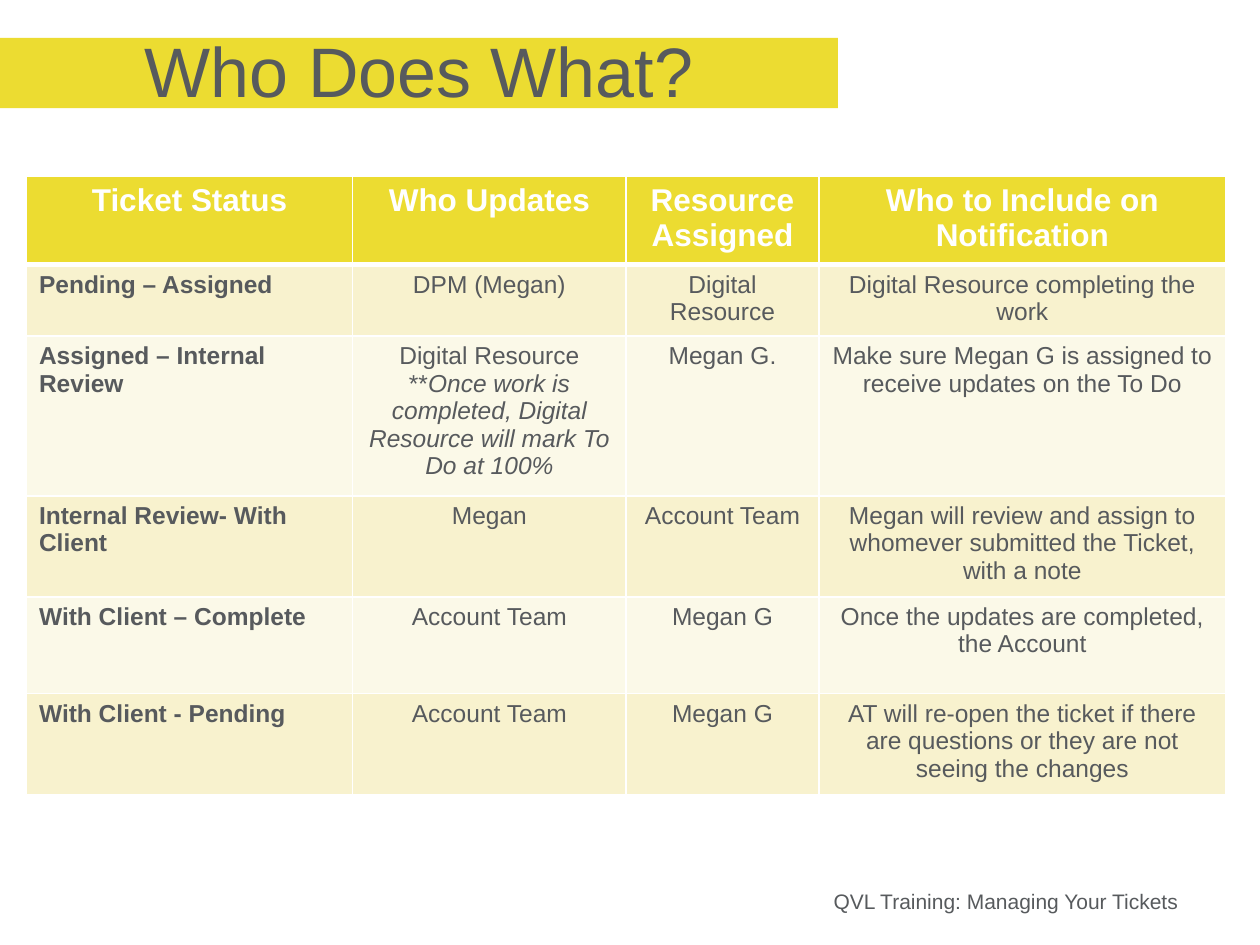
from lxml import etree
from pptx import Presentation
from pptx.dml.color import RGBColor
from pptx.enum.shapes import MSO_SHAPE
from pptx.enum.text import MSO_ANCHOR, PP_ALIGN
from pptx.oxml.ns import qn
from pptx.util import Inches, Pt

LEFT, CENTER, RIGHT = PP_ALIGN.LEFT, PP_ALIGN.CENTER, PP_ALIGN.RIGHT
MIDDLE = MSO_ANCHOR.MIDDLE
RECTANGLE = MSO_SHAPE.RECTANGLE
YELLOW = RGBColor(0xEC, 0xDC, 0x31)
SAND = RGBColor(0xF8, 0xF2, 0xCE)
CREAM = RGBColor(0xFB, 0xF9, 0xE8)
GRAY = RGBColor(0x57, 0x5A, 0x5D)
WHITE = RGBColor(0xFF, 0xFF, 0xFF)

COLUMN_WIDTHS = [2.59, 2.17, 1.53, 3.23]
ROW_HEIGHTS = [0.65, 0.53, 1.19, 0.76, 0.77, 0.76]
ROWS = [
    ["Ticket Status", "Who Updates", "Resource Assigned", "Who to Include on Notification"],
    ["Pending – Assigned", "DPM (Megan)", "Digital Resource", "Digital Resource completing the work"],
    ["Assigned – Internal Review", "Digital Resource", "Megan G.",
     "Make sure Megan G is assigned to receive updates on the To Do"],
    ["Internal Review- With Client", "Megan", "Account Team",
     "Megan will review and assign to whomever submitted the Ticket, with a note"],
    ["With Client – Complete", "Account Team", "Megan G", "Once the updates are completed, the Account"],
    ["With Client - Pending", "Account Team", "Megan G",
     "AT will re-open the ticket if there are questions or they are not seeing the changes"],
]


def style_paragraph(para, size, color, align, bold=False):
    para.alignment = align
    para.font.name = "Arial"
    para.font.size = Pt(size)
    para.font.color.rgb = color
    para.font.bold = bold


def add_border(cell, side, width):
    line = etree.SubElement(cell._tc.get_or_add_tcPr(), qn(f"a:ln{side}"), w=str(Pt(width)))
    fill = etree.SubElement(line, qn("a:solidFill"))
    etree.SubElement(fill, qn("a:srgbClr"), val=str(WHITE))


deck = Presentation()
deck.slide_width = Inches(10)
deck.slide_height = Inches(7.5)
page = deck.slides.add_slide(deck.slide_layouts[6])

footer = page.shapes.add_textbox(Inches(0.5), Inches(7), Inches(8.95), Inches(0.34))
footer.text_frame.word_wrap = True
footer.text_frame.text = "QVL Training: Managing Your Tickets"
style_paragraph(footer.text_frame.paragraphs[0], 12, GRAY, RIGHT)

title = page.shapes.add_shape(RECTANGLE, Inches(0), Inches(0.3), Inches(6.65), Inches(0.56))
title.shadow.inherit = False
title.fill.solid()
title.fill.fore_color.rgb = YELLOW
title.line.fill.background()
title_frame = title.text_frame
title_frame.word_wrap = True
title_frame.vertical_anchor = MIDDLE
title_frame.margin_top = Inches(0)
title_frame.margin_bottom = Inches(0.05)
title_frame.text = "Who Does What?"
style_paragraph(title_frame.paragraphs[0], 40, GRAY, CENTER)

table = page.shapes.add_table(
    len(ROWS), len(COLUMN_WIDTHS), Inches(0.21), Inches(1.4),
    Inches(sum(COLUMN_WIDTHS)), Inches(sum(ROW_HEIGHTS))).table
for column, width in zip(table.columns, COLUMN_WIDTHS):
    column.width = Inches(width)
for row, height in zip(table.rows, ROW_HEIGHTS):
    row.height = Inches(height)

for row_index, texts in enumerate(ROWS):
    is_header = row_index == 0
    for column_index, text in enumerate(texts):
        cell = table.cell(row_index, column_index)
        add_border(cell, "L", 1)
        add_border(cell, "R", 1)
        add_border(cell, "T", 3 if row_index == 1 else 1)
        add_border(cell, "B", 3 if is_header else 1)
        cell.fill.solid()
        cell.fill.fore_color.rgb = YELLOW if is_header else SAND if row_index % 2 else CREAM
        cell.text = text
        is_status = column_index == 0
        style_paragraph(
            cell.text_frame.paragraphs[0],
            18 if is_header else 14,
            WHITE if is_header else GRAY,
            LEFT if is_status and not is_header else CENTER,
            is_header or is_status)

note = table.cell(2, 1).text_frame.add_paragraph()
style_paragraph(note, 14, GRAY, CENTER)
note.add_run().text = "**"
span = note.add_run()
span.text = "Once work is completed, Digital Resource will mark To Do at 100%"
span.font.italic = True

deck.save("out.pptx")
